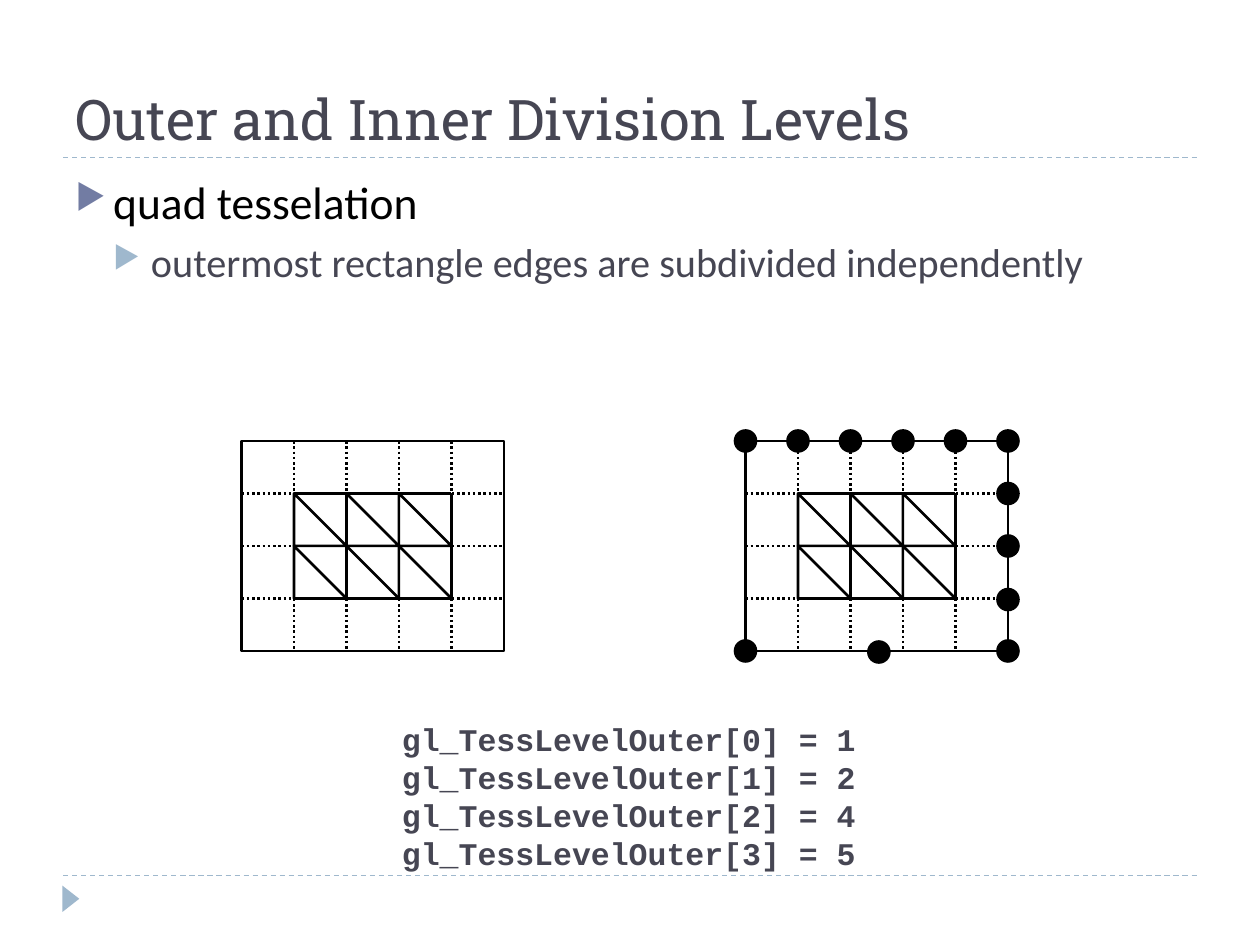
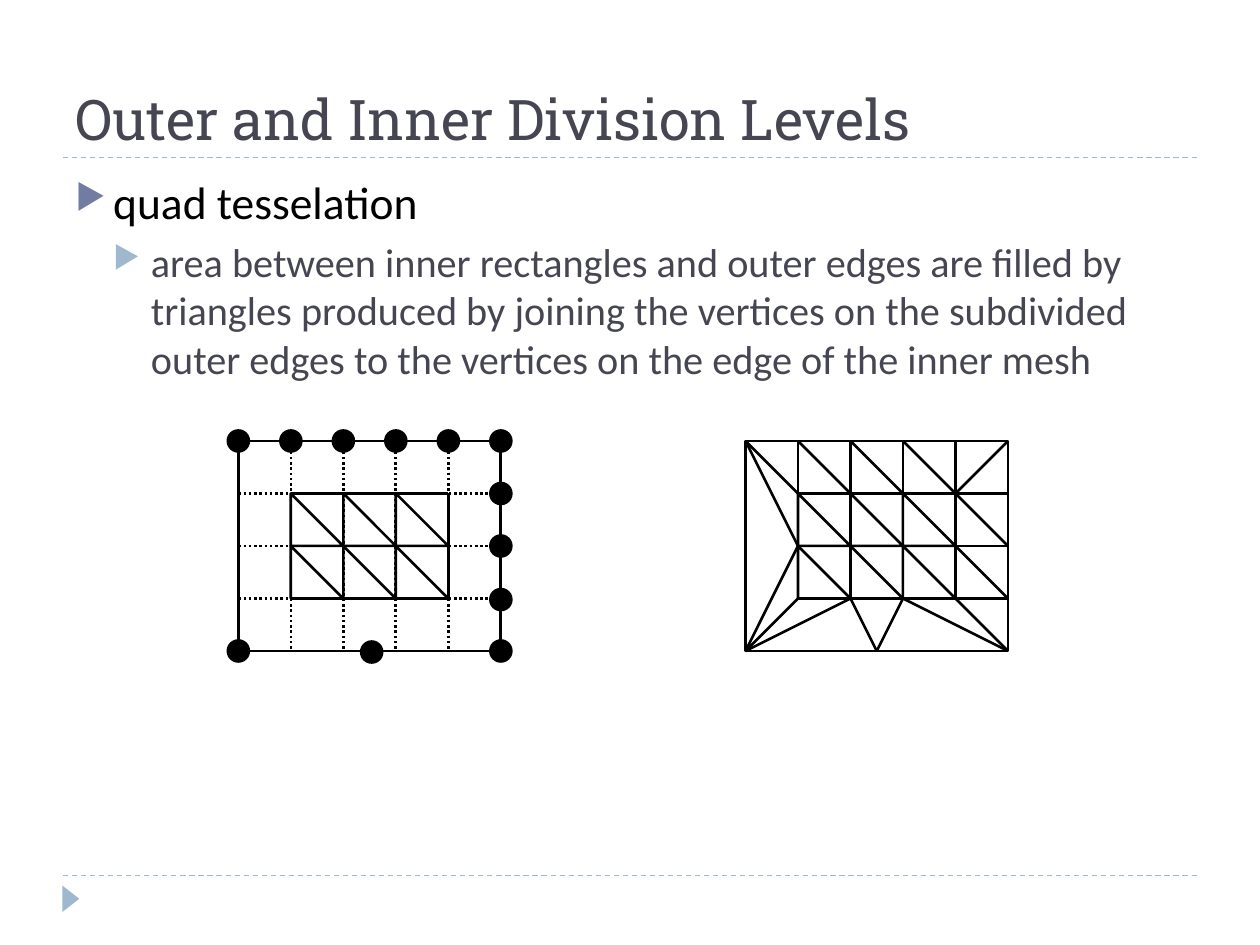
"""Build two slides on how quad tessellation divides its outer and inner edges."""
from lxml import etree
from pptx import Presentation
from pptx.dml.color import RGBColor
from pptx.enum.dml import MSO_LINE
from pptx.enum.shapes import MSO_CONNECTOR, MSO_SHAPE
from pptx.enum.text import MSO_ANCHOR
from pptx.oxml.ns import qn
from pptx.util import Pt

PX = 7620
CELL = 50
COLS, ROWS = 5, 4
DOT = 20
INDENT = 36

BLACK = RGBColor(0x00, 0x00, 0x00)
SLATE = RGBColor(0x46, 0x46, 0x53)
INDIGO = RGBColor(0x72, 0x7C, 0xA3)
SKY = RGBColor(0x9F, 0xB8, 0xCD)

RECT = MSO_SHAPE.RECTANGLE
OVAL = MSO_SHAPE.OVAL
TRI = MSO_SHAPE.ISOSCELES_TRIANGLE
LINE = MSO_CONNECTOR.STRAIGHT
DASH = MSO_LINE.DASH
DOTTED = MSO_LINE.ROUND_DOT
BOTTOM = MSO_ANCHOR.BOTTOM

HEAD = "Outer and Inner Division Levels"
TOPIC = "quad tesselation"
LEVELS = (1, 2, 4, 5)
LEFT, RIGHT, TOP = 230, 710, 420


class Deck:
    """Holds the style and the current slide, and draws each kind of element."""

    def __init__(self):
        """Open an empty deck."""
        self.prs = Presentation()
        self.prs.slide_width = 1200 * PX
        self.prs.slide_height = 900 * PX
        self.slide = None
        self.ports = {}

    def page(self, point):
        """Start a slide with its rules, corner mark, title and bullets."""
        self.slide = self.prs.slides.add_slide(self.prs.slide_layouts[6])
        self.ports = {}
        for y in (834, 150):
            self.wire((60, y), (1140, y), DASH, SKY, 0.75)
        mark = self.shape(TRI, 55, 848, 25, 16, fill=SKY, edge=None)
        mark.rotation = 90
        title = self.text((60, 20, 1080, 130), [HEAD], "Roboto Slab", 32, SLATE)
        title.vertical_anchor = BOTTOM
        body = self.text((60, 160, 1080, 648), [TOPIC, point], "Calibri", 26, BLACK)
        first, second = body.paragraphs
        self.bullet(first, 1, INDIGO)
        self.bullet(second, 2, SKY)
        second.space_before = Pt(5)
        self.style(second, "Calibri", 23, SLATE)

    def style(self, para, face, size, color, bold=False):
        """Format the runs of a paragraph."""
        for run in para.runs:
            font = run.font
            font.name, font.size, font.bold = face, Pt(size), bold
            font.color.rgb = color

    def text(self, box, lines, face, size, color, bold=False, wrap=True):
        """Add a text box with one paragraph per line."""
        left, top, width, height = (n * PX for n in box)
        frame = self.slide.shapes.add_textbox(left, top, width, height).text_frame
        frame.word_wrap = wrap
        frame.text = "\n".join(lines)
        for para in frame.paragraphs:
            self.style(para, face, size, color, bold)
        return frame

    def bullet(self, para, level, color):
        """Give a paragraph a coloured arrow and a hanging indent."""
        props = para._p.get_or_add_pPr()
        props.set("marL", str(level * INDENT * PX))
        props.set("indent", str(-INDENT * PX))
        tint = etree.SubElement(props, qn("a:buClr"))
        etree.SubElement(tint, qn("a:srgbClr"), val=str(color))
        etree.SubElement(props, qn("a:buSzPct"), val="76000")
        etree.SubElement(props, qn("a:buChar"), char="▶")

    def shape(self, kind, x, y, width, height, fill=None, edge=BLACK):
        """Add a preset shape, hollow unless a fill is given."""
        item = self.slide.shapes.add_shape(kind, x * PX, y * PX, width * PX, height * PX)
        item.shadow.inherit = False
        if fill is None:
            item.fill.background()
        else:
            item.fill.solid()
            item.fill.fore_color.rgb = fill
        if edge is None:
            item.line.fill.background()
        else:
            item.line.color.rgb = edge
            item.line.width = Pt(1.5)
        return item

    def wire(self, start, end, dash=None, color=BLACK, width=1.5):
        """Draw a line, joined to a frame where it meets the middle of a side."""
        ends = [n * PX for n in (*start, *end)]
        item = self.slide.shapes.add_connector(LINE, *ends)
        etree.SubElement(item._element.spPr, qn("a:effectLst"))
        item.line.color.rgb = color
        item.line.width = Pt(width)
        if dash is not None:
            item.line.dash_style = dash
        if start in self.ports:
            item.begin_connect(*self.ports[start])
        if end in self.ports:
            item.end_connect(*self.ports[end])

    def node(self, x, col, row):
        """Return the place of a grid node."""
        return x + int(col * CELL), TOP + int(row * CELL)

    def link(self, x, pairs, dash=None):
        """Draw lines between pairs of grid nodes."""
        for start, end in pairs:
            self.wire(self.node(x, *start), self.node(x, *end), dash)

    def frame(self, x):
        """Draw the outer rectangle and note the middles of its sides."""
        rect = self.shape(RECT, x, TOP, COLS * CELL, ROWS * CELL)
        sides = ((COLS / 2, 0), (0, ROWS / 2), (COLS / 2, ROWS), (COLS, ROWS / 2))
        for side, spot in enumerate(sides):
            self.ports[self.node(x, *spot)] = (rect, side)

    def grid(self, x):
        """Draw the dotted lines that divide the frame."""
        self.link(x, [((0, r), (COLS, r)) for r in range(1, ROWS)], DOTTED)
        self.link(x, [((c, 0), (c, ROWS)) for c in range(1, COLS)], DOTTED)

    def mesh(self, x):
        """Draw the inner triangles and close their top and right edges."""
        for row in range(1, ROWS - 1):
            for col in range(1, COLS - 1):
                tri = self.shape(TRI, *self.node(x, col, row), CELL, CELL)
                tri.adjustments[0] = 0
        self.link(x, [((c, 1), (c + 1, 1)) for c in range(1, COLS - 1)])
        self.link(x, [((COLS - 1, r), (COLS - 1, r + 1)) for r in range(1, ROWS - 1)])

    def dots(self, x):
        """Mark the vertices on the divided outer edges."""
        spots = [self.node(x, c, 0) for c in range(COLS + 1)]
        spots += [self.node(x, COLS, r) for r in (1, 2, 4)]
        spots += [self.node(x, 0, ROWS), (x + 250, TOP + 151), (x + 127, TOP + 201)]
        for cx, cy in spots:
            self.shape(OVAL, cx - DOT // 2, cy - DOT // 2, DOT, DOT, fill=BLACK)

    def fan(self, x):
        """Join the outer vertices to the inner mesh."""
        pairs = [((0, 4), (1, 3)), ((0, 4), (1, 2)), ((0, 0), (1, 1)),
                 ((0, 0), (1, 2)), ((0, 4), (2, 3)), ((2, 3), (2.5, 4)),
                 ((2.5, 4), (3, 3)), ((3, 3), (5, 4)), ((4, 3), (5, 4)),
                 ((4, 1), (5, 0))]
        pairs += [((4, r), (5, r)) for r in range(1, ROWS)]
        pairs += [((4, r), (5, r + 1)) for r in range(1, ROWS - 1)]
        pairs += [((c, 1), (c, 0)) for c in range(1, COLS)]
        pairs += [((c, 0), (c + 1, 1)) for c in range(1, COLS - 1)]
        self.link(x, pairs)

    def split(self, x):
        """Draw a framed grid with its inner mesh."""
        self.frame(x)
        self.grid(x)
        self.mesh(x)


def main():
    """Build and save both slides."""
    deck = Deck()

    deck.page("outermost rectangle edges are subdivided independently")
    deck.split(RIGHT)
    deck.split(LEFT)
    deck.dots(RIGHT)
    code = [f"gl_TessLevelOuter[{i}] = {n}" for i, n in enumerate(LEVELS)]
    deck.text((371, 680, 458, 157), code, "Courier New", 18, SLATE, bold=True, wrap=False)

    deck.page("area between inner rectangles and outer edges are filled by "
              "triangles produced by joining the vertices on the subdivided "
              "outer edges to the vertices on the edge of the inner mesh")
    deck.frame(RIGHT)
    deck.mesh(RIGHT)
    deck.split(LEFT - 3)
    deck.dots(LEFT - 3)
    deck.fan(RIGHT)

    deck.prs.save("out.pptx")


if __name__ == "__main__":
    main()
